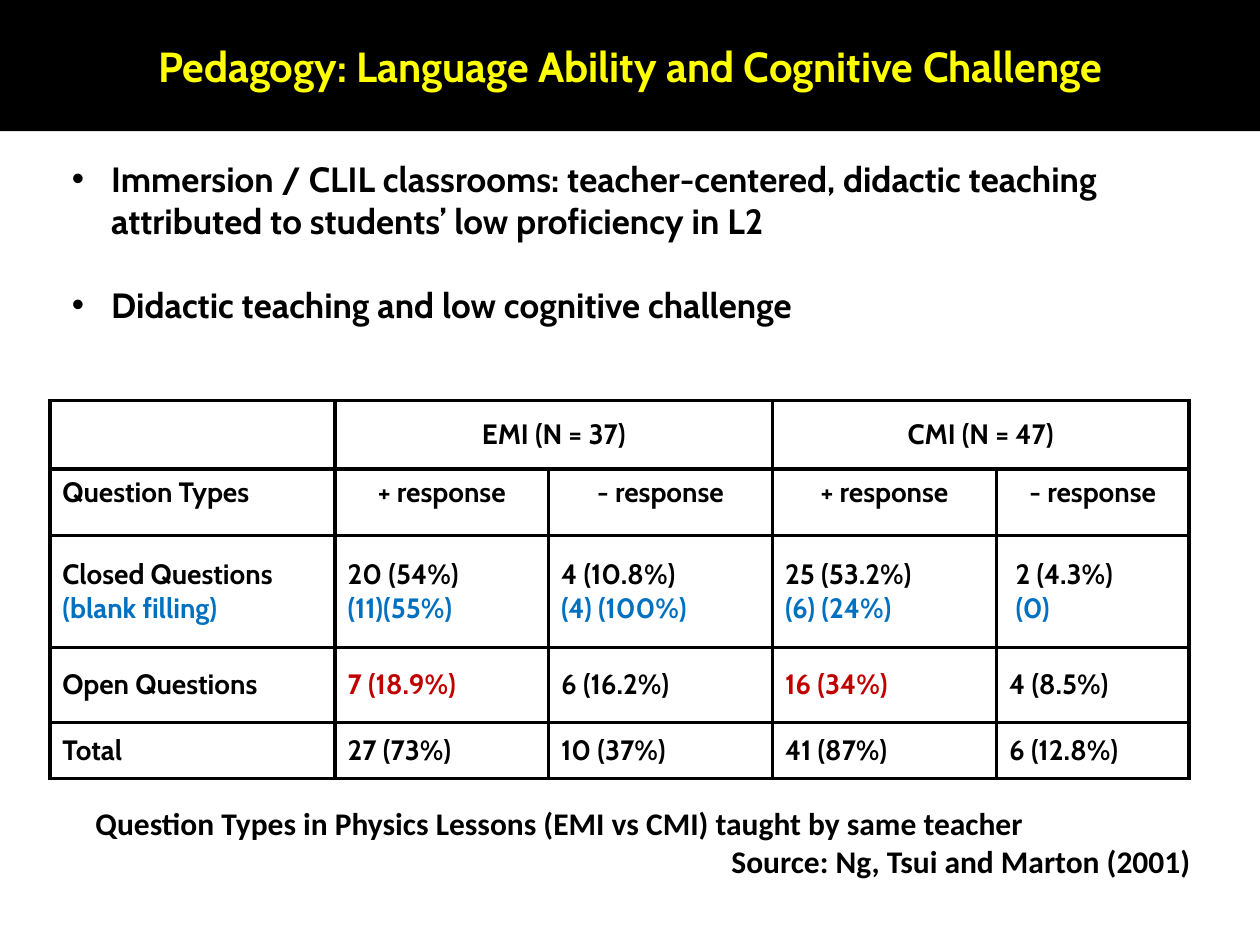
from lxml.etree import SubElement
from pptx import Presentation
from pptx.dml.color import RGBColor
from pptx.enum.text import MSO_ANCHOR, PP_ALIGN
from pptx.oxml.ns import qn
from pptx.util import Pt

# Content
TITLE = "Pedagogy: Language Ability and Cognitive Challenge"
BULLETS = [
    "Immersion / CLIL classrooms: teacher-centered, didactic teaching "
    "attributed to students’ low proficiency in L2",
    "Didactic teaching and low cognitive challenge",
]
GROUPS = [("EMI (N = 37)", 1), ("CMI (N = 47)", 3)]  # text, first column
HEADERS = ["Question Types", "+ response", "- response", "+ response", "- response"]
# Each cell lists its lines; the second line is the blank-filling share
BODY = [
    [("Closed Questions", "(blank filling)"), ("20 (54%)", "(11)(55%)"),
     ("4 (10.8%)", "(4) (100%)"), ("25 (53.2%)", "(6) (24%)"), ("2 (4.3%)", "(0)")],
    [("Open Questions",), ("7 (18.9%)",), ("6 (16.2%)",), ("16 (34%)",), ("4 (8.5%)",)],
    [("Total",), ("27 (73%)",), ("10 (37%)",), ("41 (87%)",), ("6 (12.8%)",)],
]
HIGHLIGHTS = {"7 (18.9%)", "16 (34%)"}
CAPTION = [
    ("Question Types in Physics Lessons (EMI vs CMI) taught by same teacher", PP_ALIGN.LEFT),
    ("Source: Ng, Tsui and Marton (2001)", PP_ALIGN.RIGHT),
]

THEME = {
    "font": "Cabin", "caption_font": "Calibri",
    "black": "000000", "yellow": "FFFF00", "blue": "0070C0", "red": "C00000",
    "title": 24, "bullet": 20, "table": 16, "caption": 18,
}

# Layout, in points
COLUMN_WIDTHS = [163, 122, 128, 128, 110]
ROW_HEIGHTS = [39, 38, 64, 43, 32]
BORDER_WIDTH = 2.25
BULLET_INDENT = 22.5


def style(paragraph, size, color="black", font="font", align=PP_ALIGN.LEFT):
    paragraph.alignment = align
    paragraph.font.name = THEME[font]
    paragraph.font.size = Pt(THEME[size])
    paragraph.font.bold = True
    paragraph.font.color.rgb = RGBColor.from_string(THEME[color])


def add_paragraphs(text_frame, texts):
    for index, text in enumerate(texts):
        paragraph = text_frame.add_paragraph() if index else text_frame.paragraphs[0]
        paragraph.text = text
        yield index, paragraph


def add_text_box(slide, left, top, width, height):
    text_frame = slide.shapes.add_textbox(Pt(left), Pt(top), Pt(width), Pt(height)).text_frame
    text_frame.word_wrap = True
    return text_frame


def add_bullet(paragraph):
    properties = paragraph._p.get_or_add_pPr()
    properties.set("marL", str(Pt(BULLET_INDENT)))
    properties.set("indent", str(-Pt(BULLET_INDENT)))
    SubElement(properties, qn("a:buFont"), typeface="Arial")
    SubElement(properties, qn("a:buChar"), char="•")


def frame_cell(cell):
    properties = cell._tc.get_or_add_tcPr()
    for side in ("lnL", "lnR", "lnT", "lnB"):
        line = SubElement(properties, qn(f"a:{side}"), w=str(Pt(BORDER_WIDTH)))
        fill = SubElement(line, qn("a:solidFill"))
        SubElement(fill, qn("a:srgbClr"), val=THEME["black"])
    cell.fill.background()


def fill_cell(cell, lines, align=PP_ALIGN.LEFT, anchor=MSO_ANCHOR.MIDDLE):
    cell.vertical_anchor = anchor
    for index, paragraph in add_paragraphs(cell.text_frame, lines):
        color = "blue" if index else "red" if lines[0] in HIGHLIGHTS else "black"
        style(paragraph, "table", color, align=align)


def add_title(slide):
    title = slide.shapes.title
    title.left, title.top, title.width, title.height = Pt(0), Pt(0), Pt(720), Pt(75)
    title.fill.solid()
    title.fill.fore_color.rgb = RGBColor.from_string(THEME["black"])
    title.text_frame.text = TITLE
    title.text_frame.vertical_anchor = MSO_ANCHOR.MIDDLE
    style(title.text_frame.paragraphs[0], "title", "yellow", align=PP_ALIGN.CENTER)


def add_question_table(slide):
    table = slide.shapes.add_table(
        len(ROW_HEIGHTS), len(COLUMN_WIDTHS), Pt(28.5), Pt(229),
        Pt(sum(COLUMN_WIDTHS)), Pt(sum(ROW_HEIGHTS))).table
    table.first_row = table.horz_banding = False
    for column, width in zip(table.columns, COLUMN_WIDTHS):
        column.width = Pt(width)
    for row, height in zip(table.rows, ROW_HEIGHTS):
        row.height = Pt(height)
    for cell in table.iter_cells():
        frame_cell(cell)

    # Two header rows
    for text, column in GROUPS:
        table.cell(0, column).merge(table.cell(0, column + 1))
        fill_cell(table.cell(0, column), [text], PP_ALIGN.CENTER)
    for column, text in enumerate(HEADERS):
        align = PP_ALIGN.CENTER if column else PP_ALIGN.LEFT
        fill_cell(table.cell(1, column), [text], align, MSO_ANCHOR.TOP)

    # Counts, with the last closed-question cell set in slightly
    for row, cells in enumerate(BODY, start=2):
        for column, lines in enumerate(cells):
            fill_cell(table.cell(row, column), lines)
    table.cell(2, 4).margin_left = Pt(11)


def main():
    presentation = Presentation()
    presentation.slide_width, presentation.slide_height = Pt(720), Pt(540)
    slide = presentation.slides.add_slide(presentation.slide_layouts[5])
    add_title(slide)
    add_question_table(slide)

    # Caption and source
    caption = add_text_box(slide, 47.5, 456, 640, 51)
    for index, paragraph in add_paragraphs(caption, [text for text, _ in CAPTION]):
        style(paragraph, "caption", font="caption_font", align=CAPTION[index][1])

    # Bullets
    bullets = add_text_box(slide, 34, 86.5, 654, 126)
    for index, paragraph in add_paragraphs(bullets, BULLETS):
        add_bullet(paragraph)
        style(paragraph, "bullet")
        if index:
            paragraph.space_before = Pt(24)

    presentation.save("out.pptx")


if __name__ == "__main__":
    main()
